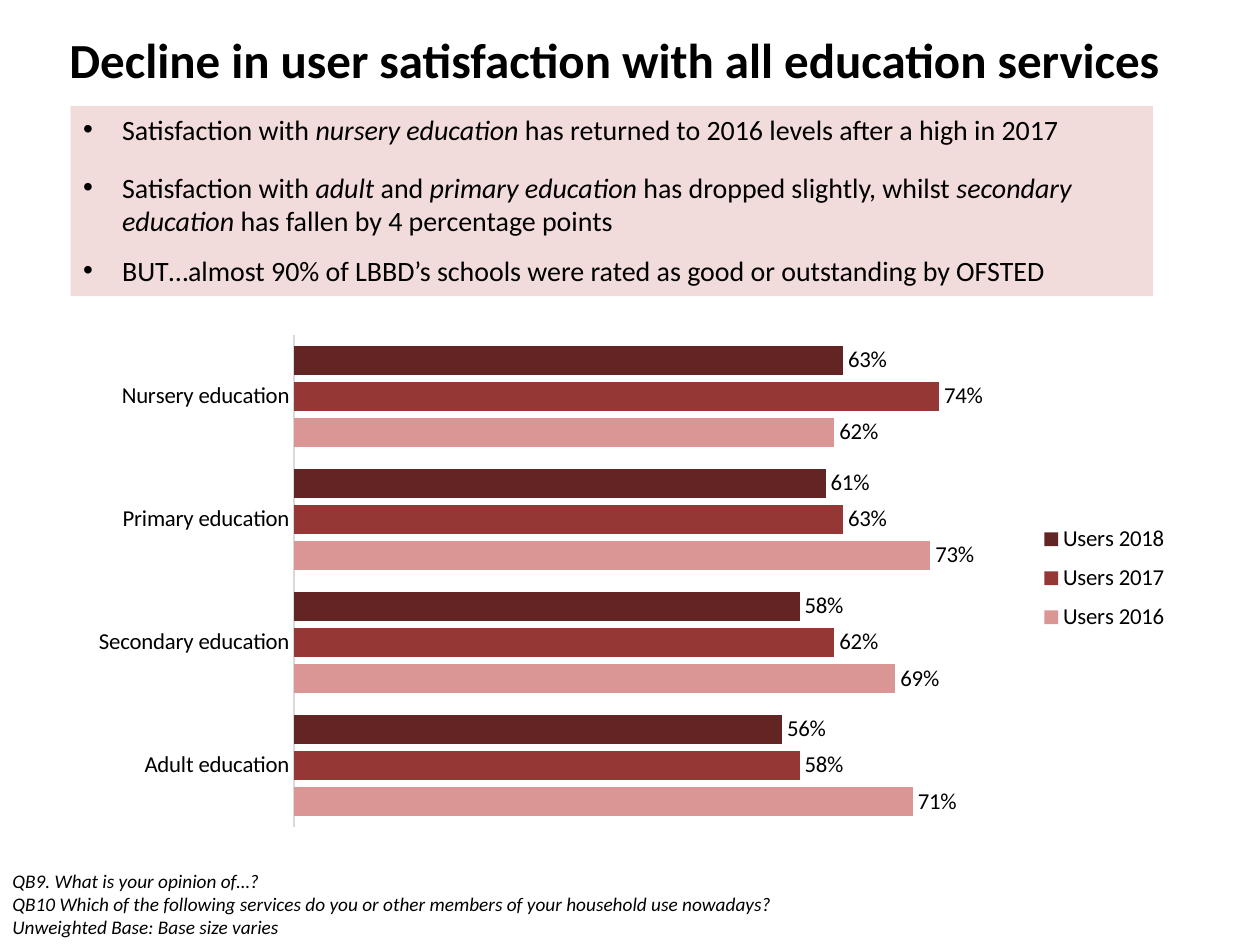
import dataclasses
import typing

import lxml.etree
import pptx
import pptx.chart.data
import pptx.dml.color
import pptx.enum.chart
import pptx.enum.text
import pptx.oxml
import pptx.oxml.ns
import pptx.util

Color = pptx.dml.color.RGBColor
BLACK = Color(0x00, 0x00, 0x00)
BLUSH = Color(0xF2, 0xDC, 0xDB)
GREY = Color(0xD9, 0xD9, 0xD9)
ROSE = Color(0xD9, 0x96, 0x94)
BRICK = Color(0x95, 0x37, 0x35)
WINE = Color(0x63, 0x25, 0x23)

FONT = "Calibri"
COLS, ROWS = 100, 75
WIDE, HIGH = pptx.util.Inches(10), pptx.util.Inches(7.5)


@dataclasses.dataclass
class Box:
    """A place on the grid, in columns and rows."""
    col: float
    row: float
    cols: float
    rows: float

    def place(self) -> tuple[int, int, int, int]:
        return (int(self.col * WIDE / COLS), int(self.row * HIGH / ROWS),
                int(self.cols * WIDE / COLS), int(self.rows * HIGH / ROWS))


@dataclasses.dataclass
class Line:
    """A paragraph; words between asterisks are italic."""
    text: str
    gap: float = 0


@dataclasses.dataclass
class Wave:
    """One survey year."""
    name: str
    color: Color
    vals: tuple[float, ...]


TITLE = [Line("Decline in user satisfaction with all education services")]
POINTS = [
    Line("Satisfaction with *nursery education *has returned to 2016 levels after a high in 2017"),
    Line("Satisfaction with *adult* and *primary education *has dropped slightly, "
         "whilst *secondary education *has fallen by 4 percentage points", 14),
    Line("BUT…almost 90% of LBBD’s schools were rated as good or outstanding by OFSTED", 9),
]
NOTES = [
    Line("*QB9. What is your opinion of…?*"),
    Line("*QB10 Which of the following services do you or other members "
         "of your household use nowadays?*"),
    Line("*Unweighted Base: Base size varies*"),
]
CATS = ["Adult education", "Secondary education", "Primary education", "Nursery education"]
WAVES = [
    Wave("Users 2016", ROSE, (0.71, 0.69, 0.73, 0.62)),
    Wave("Users 2017", BRICK, (0.58, 0.62, 0.63, 0.74)),
    Wave("Users 2018", WINE, (0.56, 0.58, 0.61, 0.63)),
]


def style(font: typing.Any, size: float, bold: bool = False, slant: bool = False) -> None:
    font.name, font.size = FONT, pptx.util.Pt(size)
    font.bold, font.italic = bold, slant
    font.color.rgb = BLACK


def write(shape: typing.Any, lines: list[Line], *, size: float,
          bold: bool = False, dots: bool = False) -> None:
    frame = shape.text_frame
    frame.word_wrap = True
    frame.auto_size = pptx.enum.text.MSO_AUTO_SIZE.NONE
    for num, line in enumerate(lines):
        para = frame.add_paragraph() if num else frame.paragraphs[0]
        para.alignment = pptx.enum.text.PP_ALIGN.LEFT
        para.space_before = pptx.util.Pt(line.gap)
        if dots:
            props = para._p.get_or_add_pPr()
            hang = pptx.util.Inches(0.31)
            props.set("marL", str(hang))
            props.set("indent", str(-hang))
            face = lxml.etree.SubElement(props, pptx.oxml.ns.qn("a:buFont"))
            face.set("typeface", "Arial")
            mark = lxml.etree.SubElement(props, pptx.oxml.ns.qn("a:buChar"))
            mark.set("char", "•")
        for part, text in enumerate(line.text.split("*")):
            if text:
                run = para.add_run()
                run.text = text
                style(run.font, size, bold, part % 2 == 1)


def pin(part: typing.Any, box: tuple[float, ...], inner: bool = False) -> None:
    """Fix a chart part at shares of the chart's size."""
    node = part.find(pptx.oxml.ns.qn("c:layout"))
    if node is None:
        node = pptx.oxml.parse_xml(f"<c:layout {pptx.oxml.ns.nsdecls('c')}/>")
        spot = part.find(pptx.oxml.ns.qn("c:legendPos"))
        if spot is None:
            part.insert(0, node)
        else:
            spot.addnext(node)
    for child in list(node):
        node.remove(child)
    man = lxml.etree.SubElement(node, pptx.oxml.ns.qn("c:manualLayout"))
    pairs = [("layoutTarget", "inner")] if inner else []
    pairs += [("xMode", "edge"), ("yMode", "edge"), *zip("xywh", box)]
    for tag, val in pairs:
        lxml.etree.SubElement(man, pptx.oxml.ns.qn(f"c:{tag}")).set("val", str(val))


def draw(slide: typing.Any, box: Box) -> None:
    data = pptx.chart.data.CategoryChartData(number_format="0%")
    data.categories = CATS
    for wave in WAVES:
        data.add_series(wave.name, wave.vals)
    enum = pptx.enum.chart
    chart = slide.shapes.add_chart(enum.XL_CHART_TYPE.BAR_CLUSTERED, *box.place(), data).chart
    chart.has_title = False
    style(chart.font, 13)

    # Axes
    axis = chart.category_axis
    axis.major_tick_mark = enum.XL_TICK_MARK.NONE
    axis.format.line.color.rgb = GREY
    axis.format.line.width = pptx.util.Pt(0.75)
    style(axis.tick_labels.font, 13)
    scale = chart.value_axis
    scale.minimum_scale, scale.maximum_scale = 0, 1
    scale.has_major_gridlines = False
    scale.visible = False

    # Bars
    plot = chart.plots[0]
    plot.gap_width, plot.overlap = 75, -25
    plot.vary_by_categories = False
    for wave, bars in zip(WAVES, plot.series):
        bars.format.fill.solid()
        bars.format.fill.fore_color.rgb = wave.color
        tags = bars.data_labels
        tags.show_value = True
        tags.number_format, tags.number_format_is_linked = "0%", False
        tags.position = enum.XL_LABEL_POSITION.OUTSIDE_END
        style(tags.font, 13)

    # Legend
    chart.has_legend = True
    key = chart.legend
    key.position = enum.XL_LEGEND_POSITION.BOTTOM
    key.include_in_layout = False
    style(key.font, 13)
    pin(key._element, (0.85, 0.34, 0.15, 0.23))
    pin(chart._chartSpace.chart.plotArea, (0.2, 0.02, 0.78, 0.88), inner=True)


def main() -> None:
    deck = pptx.Presentation()
    deck.slide_width, deck.slide_height = WIDE, HIGH
    slide = deck.slides.add_slide(deck.slide_layouts[1])

    # Title and main points
    head, body = slide.placeholders
    for shape, box in ((head, Box(4.5, 1.5, 93.1, 6.3)), (body, Box(5.6, 8.4, 85.9, 15.1))):
        shape.left, shape.top, shape.width, shape.height = box.place()
    write(head, TITLE, size=28, bold=True)
    body.fill.solid()
    body.fill.fore_color.rgb = BLUSH
    write(body, POINTS, size=16, dots=True)

    # Chart and question notes
    draw(slide, Box(5.6, 25.7, 88.7, 44.4))
    notes = slide.shapes.add_textbox(*Box(0, 68.5, 71.8, 6.5).place())
    write(notes, NOTES, size=11)

    deck.save("out.pptx")


if __name__ == "__main__":
    main()
